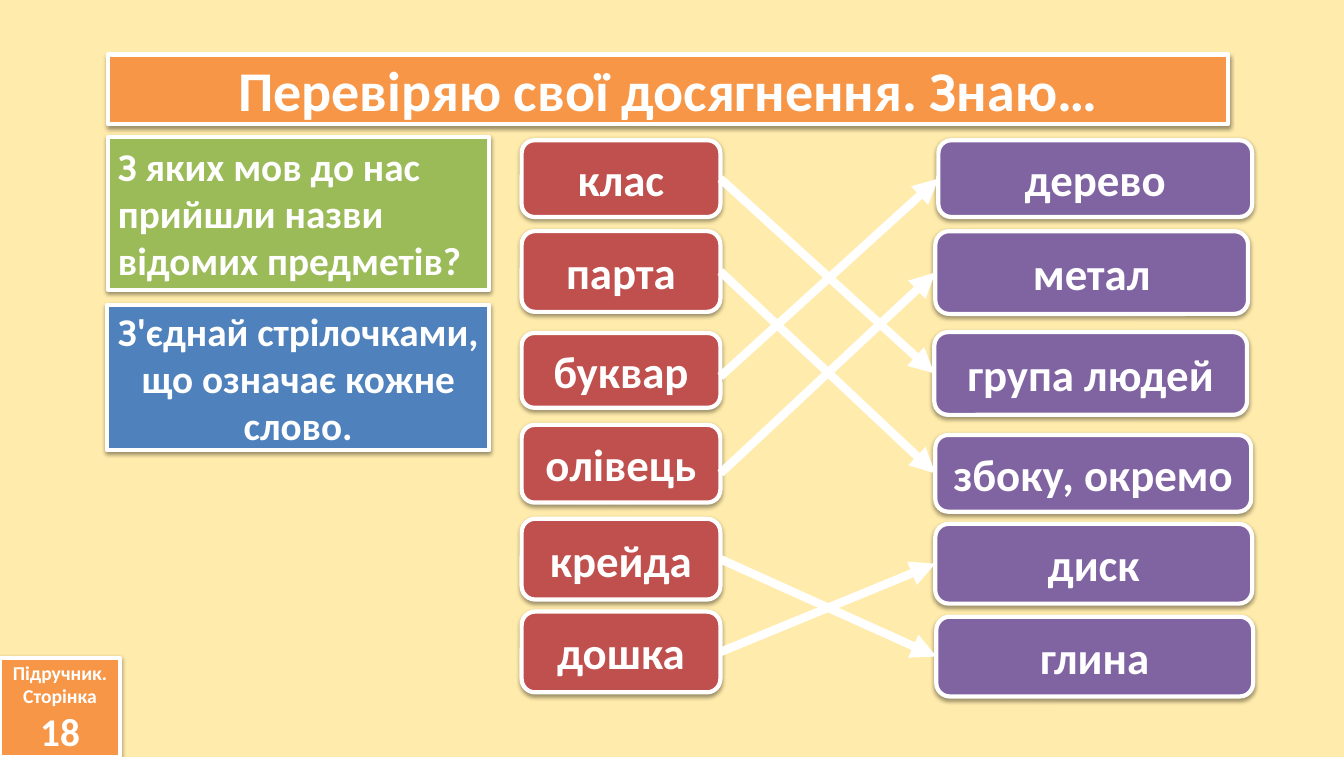
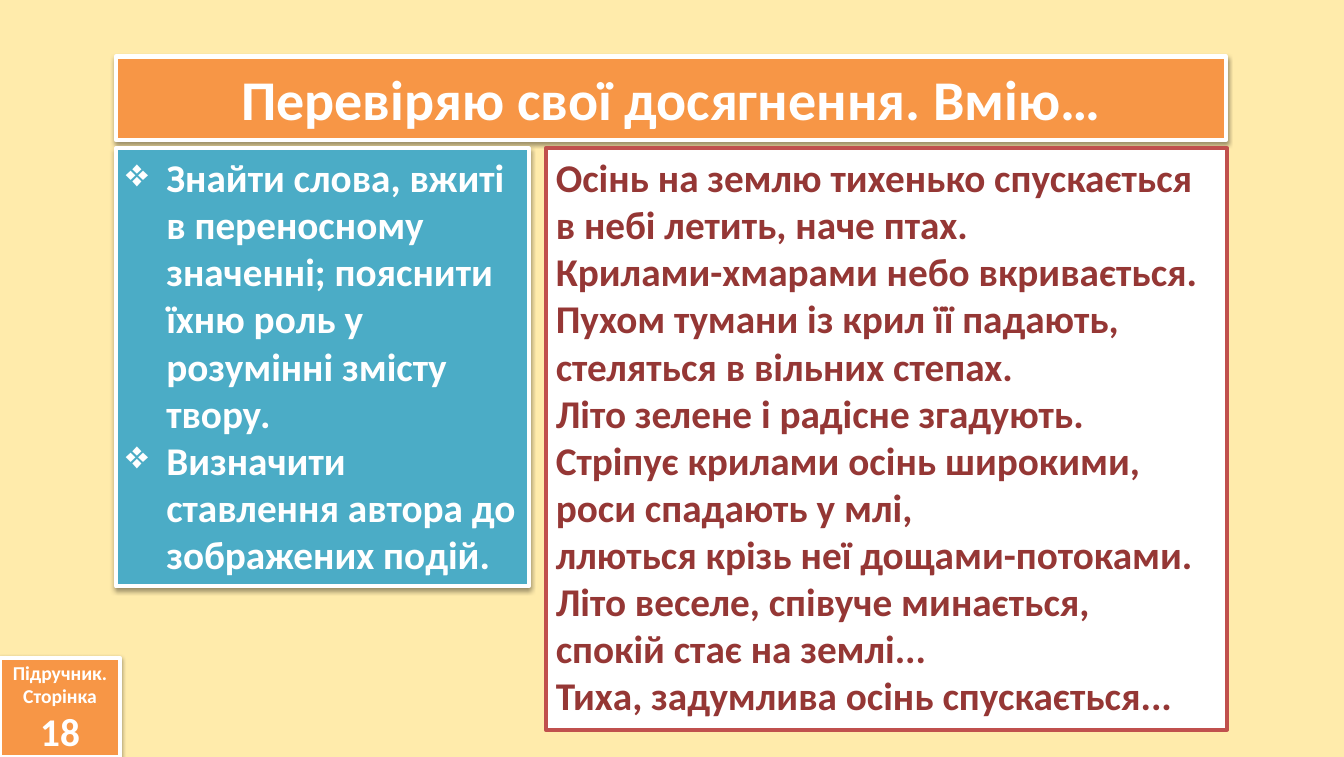
from lxml.etree import SubElement
from pptx import Presentation
from pptx.dml.color import RGBColor
from pptx.enum.shapes import MSO_CONNECTOR, MSO_SHAPE
from pptx.enum.text import MSO_ANCHOR, MSO_AUTO_SIZE, PP_ALIGN
from pptx.oxml import parse_xml
from pptx.oxml.ns import nsdecls, qn
from pptx.util import Inches, Pt

THEME = {
    "font": "Calibri",
    "color": {
        "page": "FFEBAB", "white": "FFFFFF", "orange": "F79646", "green": "9BBB59",
        "blue": "4F81BD", "red": "C0504D", "purple": "8064A2", "aqua": "4BACC6",
        "wine": "953735",
    },
    "size": {"title": 40, "word": 32, "body": 28, "small": 14},
    "line": {"border": 3, "arrow": 6},
}
WIDTH, HEIGHT = 13.32, 7.5

KNOW_TITLE = "Перевіряю свої досягнення. Знаю…"
QUESTION = "З яких мов до нас прийшли назви відомих предметів?"
TASK = "З'єднай стрілочками, що означає кожне слово."
WORD_LEFT, WORD_WIDTH = 5.17, 1.97
# word: top, height
WORDS = {
    "клас": (1.39, 0.76),
    "парта": (2.29, 0.8),
    "буквар": (3.3, 0.74),
    "олівець": (4.21, 0.77),
    "крейда": (5.14, 0.8),
    "дошка": (6.06, 0.8),
}
# meaning: left, top, width, height
MEANINGS = {
    "дерево": (9.3, 1.39, 3.11, 0.76),
    "метал": (9.27, 2.29, 3.1, 0.82),
    "група людей": (9.26, 3.29, 3.1, 0.82),
    "збоку, окремо": (9.27, 4.31, 3.13, 0.76),
    "диск": (9.27, 5.19, 3.14, 0.79),
    "глина": (9.28, 6.11, 3.14, 0.79),
}
# word, meaning, start height where the arrow leaves below the middle
LINKS = [
    ("клас", "група людей", None),
    ("парта", "збоку, окремо", None),
    ("буквар", "дерево", 3.73),
    ("олівець", "метал", 4.69),
    ("крейда", "глина", None),
    ("дошка", "диск", None),
]

SKILL_TITLE = "Перевіряю свої досягнення. Вмію…"
SKILLS = [
    "Знайти слова, вжиті в переносному значенні; пояснити їхню роль у розумінні змісту твору.",
    "Визначити ставлення автора до зображених подій.",
]
POEM = [
    "Осінь на землю тихенько спускається",
    "в небі летить, наче птах.",
    "Крилами-хмарами небо вкривається.",
    "Пухом тумани із крил її падають,",
    "стеляться в вільних степах.",
    "Літо зелене і радісне згадують.",
    "Стріпує крилами осінь широкими,",
    "роси спадають у млі,",
    "ллються крізь неї дощами-потоками.",
    "Літо веселе, співуче минається,",
    "спокій стає на землі...",
    "Тиха, задумлива осінь спускається...",
]
PAGE_TAG = [("Підручник.", "small"), ("Сторінка", "small"), ("18", "body")]

SHADOW = (
    f'<a:effectLst {nsdecls("a")}><a:outerShdw blurRad="40000" dist="20000" dir="5400000" '
    'rotWithShape="0"><a:srgbClr val="000000"><a:alpha val="38000"/></a:srgbClr>'
    "</a:outerShdw></a:effectLst>"
)


def rgb(name):
    return RGBColor.from_string(THEME["color"][name])


def set_bullet(p, indent=0.4):
    pPr = p._p.get_or_add_pPr()
    emu = str(Inches(indent))
    pPr.set("marL", emu)
    pPr.set("indent", "-" + emu)
    SubElement(pPr, qn("a:buChar")).set("char", "❖")
    tab = SubElement(SubElement(pPr, qn("a:tabLst")), qn("a:tab"))
    tab.set("pos", emu)
    tab.set("algn", "l")


def add_box(slide, box, lines, fill, size="body", *, kind=MSO_SHAPE.RECTANGLE, border="white",
            ink="white", shadow=True, centered=True, bullets=False):
    """Filled box; a line is a string or a (string, size name) pair.

    Text that is not centred starts at the top and the box grows with it.
    """
    sp = slide.shapes.add_shape(kind, *map(Inches, box))
    sp.shadow.inherit = False
    if shadow:
        spPr = sp._element.spPr
        spPr.replace(spPr.find(qn("a:effectLst")), parse_xml(SHADOW))
    sp.fill.solid()
    sp.fill.fore_color.rgb = rgb(fill)
    sp.line.color.rgb = rgb(border)
    sp.line.width = Pt(THEME["line"]["border"])
    tf = sp.text_frame
    frame = {
        "word_wrap": True,
        "vertical_anchor": MSO_ANCHOR.MIDDLE if centered else MSO_ANCHOR.TOP,
        "auto_size": MSO_AUTO_SIZE.NONE if centered else MSO_AUTO_SIZE.SHAPE_TO_FIT_TEXT,
    }
    for name, value in frame.items():
        setattr(tf, name, value)
    for i, line in enumerate(lines):
        text, line_size = (line, size) if isinstance(line, str) else line
        p = tf.paragraphs[0] if i == 0 else tf.add_paragraph()
        p.alignment = PP_ALIGN.CENTER if centered else PP_ALIGN.LEFT
        if bullets:
            set_bullet(p)
        r = p.add_run()
        r.text = text
        style = {"name": THEME["font"], "size": Pt(THEME["size"][line_size]), "bold": True}
        for name, value in style.items():
            setattr(r.font, name, value)
        r.font.color.rgb = rgb(ink)
    return sp


def add_arrow(slide, word, meaning, start_y):
    """Arrow from a word's right side to a meaning's left side."""
    x = word.left + word.width
    y = word.top + word.height // 2 if start_y is None else Inches(start_y)
    cx = slide.shapes.add_connector(MSO_CONNECTOR.STRAIGHT, x, y, meaning.left,
                                    meaning.top + meaning.height // 2)
    if start_y is None:
        cx.begin_connect(word, 3)
    cx.end_connect(meaning, 1)
    cx.line.color.rgb = rgb("white")
    cx.line.width = Pt(THEME["line"]["arrow"])
    SubElement(cx.line._get_or_add_ln(), qn("a:tailEnd")).set("type", "triangle")
    SubElement(cx._element.spPr, qn("a:effectLst"))


def new_slide(prs, title, title_box):
    slide = prs.slides.add_slide(prs.slide_layouts[6])
    slide.background.fill.solid()
    slide.background.fill.fore_color.rgb = rgb("page")
    add_box(slide, title_box, [title], "orange", "title")
    tag_w, tag_h = 1.19, 0.98
    add_box(slide, (0, HEIGHT - tag_h, tag_w, tag_h), PAGE_TAG, "orange")
    return slide


def build_know(prs):
    slide = new_slide(prs, KNOW_TITLE, (1.07, 0.54, 11.1, 0.69))
    add_box(slide, (1.07, 1.36, 3.78, 1.51), [QUESTION], "green", centered=False)
    add_box(slide, (1.06, 3.02, 3.79, 1.44), [TASK], "blue")
    rounded = MSO_SHAPE.ROUNDED_RECTANGLE
    words = {
        text: add_box(slide, (WORD_LEFT, top, WORD_WIDTH, height), [text], "red", "word",
                      kind=rounded)
        for text, (top, height) in WORDS.items()
    }
    meanings = {
        text: add_box(slide, box, [text], "purple", "word", kind=rounded)
        for text, box in MEANINGS.items()
    }
    for word, meaning, start_y in LINKS:
        add_arrow(slide, words[word], meanings[meaning], start_y)


def build_skills(prs):
    left, top = 1.15, 1.47
    slide = new_slide(prs, SKILL_TITLE, (left, 0.56, 11, 0.83))
    add_box(slide, (left, top, 4.09, 4.34), SKILLS, "aqua", centered=False, bullets=True)
    add_box(slide, (5.41, top, 6.75, 5.76), POEM, "white", border="red", ink="wine",
            shadow=False, centered=False)


def main():
    prs = Presentation()
    prs.slide_width, prs.slide_height = Inches(WIDTH), Inches(HEIGHT)
    build_know(prs)
    build_skills(prs)
    prs.save("out.pptx")


if __name__ == "__main__":
    main()
